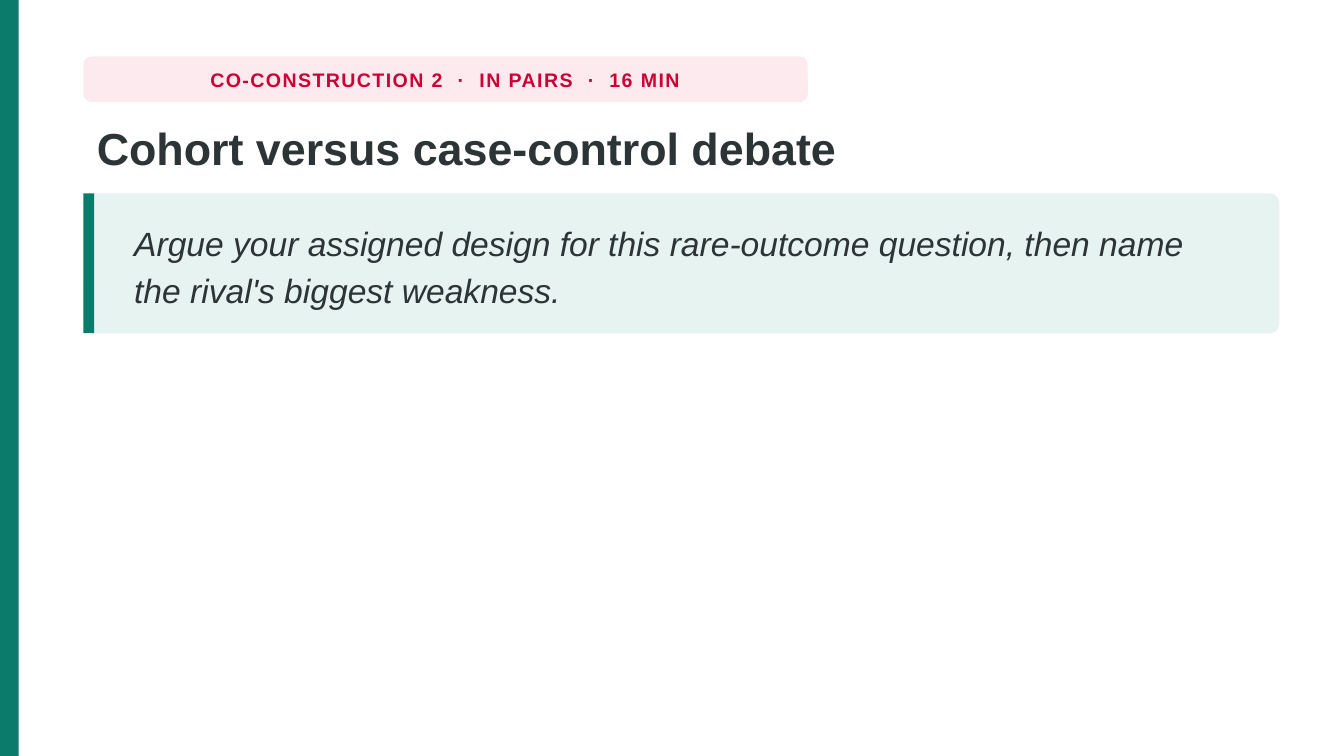
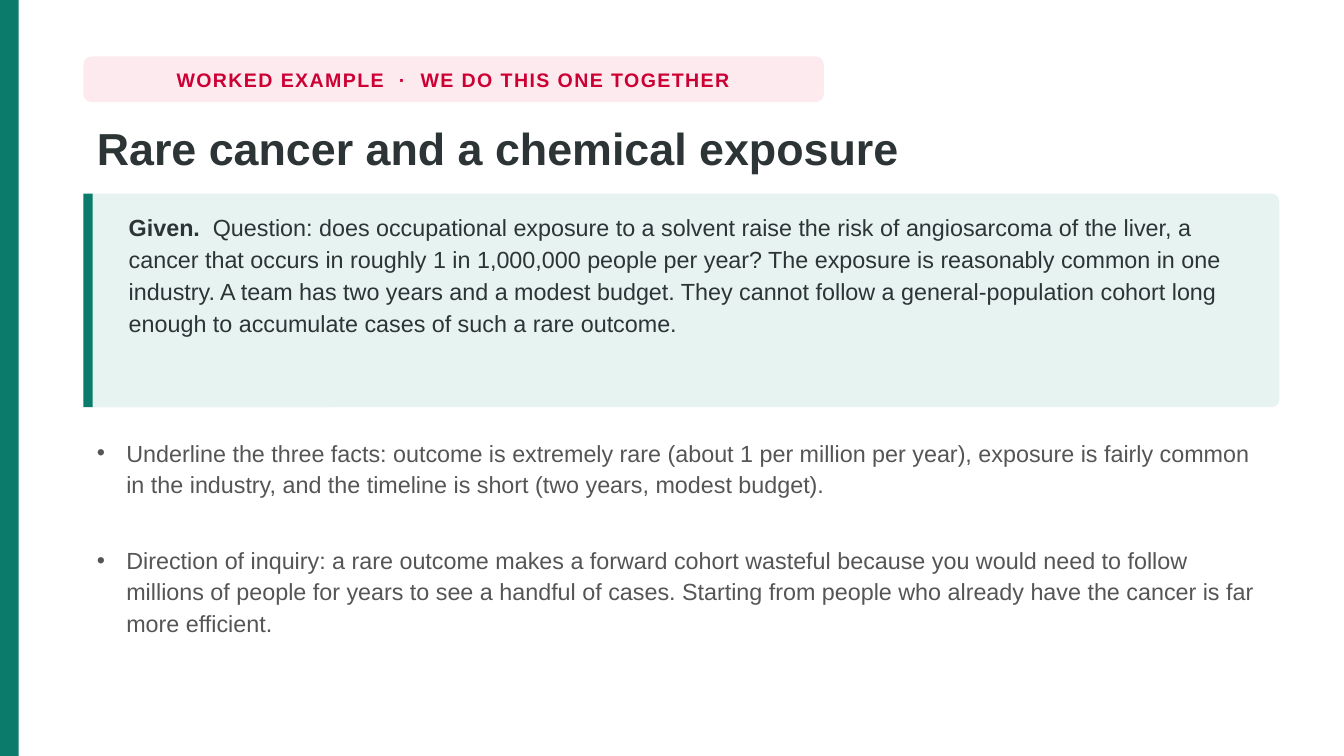
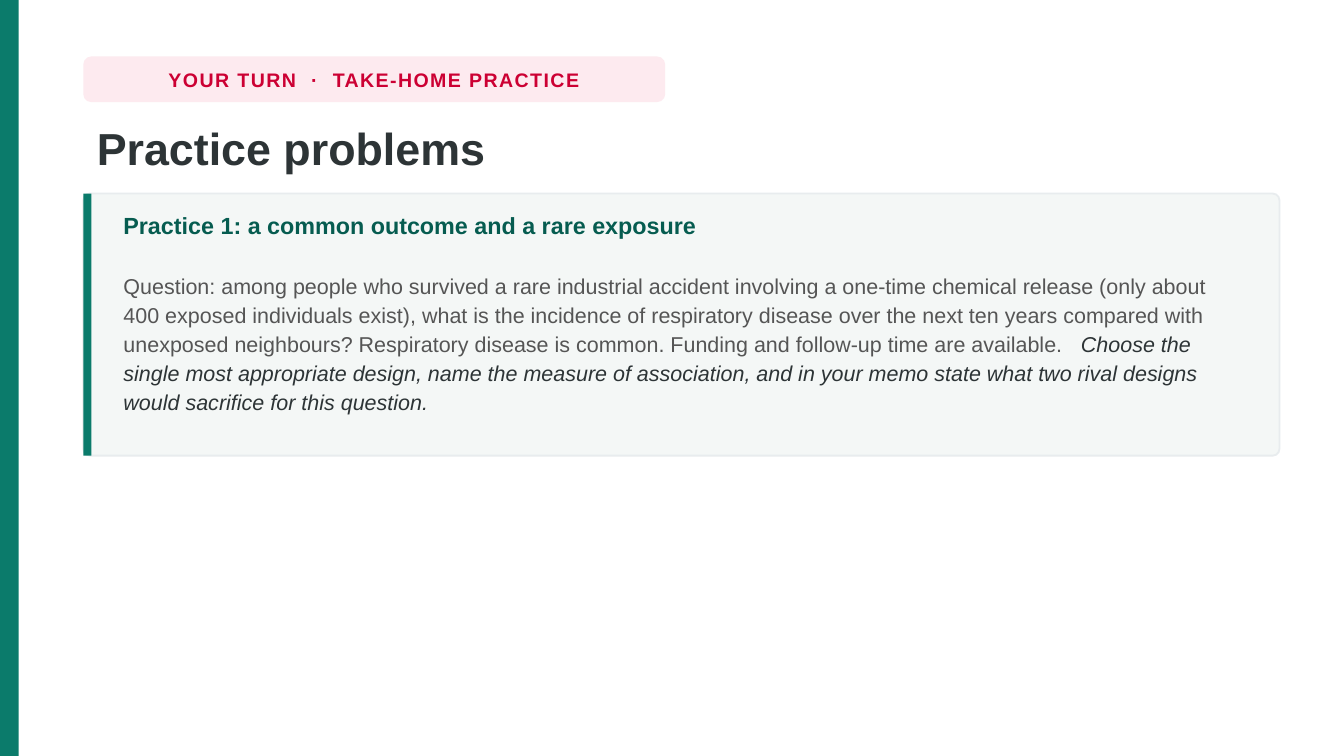
import pptx
import pptx.dml.color
import pptx.enum.shapes
import pptx.enum.text
import pptx.oxml
import pptx.oxml.ns
import pptx.util

Inches, Pt = pptx.util.Inches, pptx.util.Pt
SHAPE = pptx.enum.shapes.MSO_SHAPE
ALIGN = pptx.enum.text.PP_ALIGN
ANCHOR = pptx.enum.text.MSO_ANCHOR

FONT = "Arial"
COLORS = {
    "green": "0B7B6B", "dark_green": "065C50", "mint": "E6F3F0",
    "red": "CC0033", "pink": "FDEAEF", "ink": "2D3436",
    "gray": "555555", "pale": "F4F7F6", "border": "E8ECEE",
}

# Shared layout, in inches; the slide is 16:9
SLIDE_W = 10
SLIDE_H = SLIDE_W * 9 / 16
LEFT, WIDTH = 0.62, 8.9
CARD_TOP = 1.44

# Run styles: size, colour, bold, italic
STYLES = {
    "pill": (10.5, "red", True, False),
    "title": (24, "ink", True, False),
    "quote": (18, "ink", False, True),
    "label": (12.5, "ink", True, False),
    "given": (12.5, "ink", False, False),
    "bullet": (12.5, "gray", False, False),
    "heading": (12.5, "dark_green", True, False),
    "problem": (11.5, "gray", False, False),
    "task": (11.5, "ink", False, True),
}

# Content; a card's text is a list of paragraphs, each a list of (style, text)
SLIDES = [
    {
        "pill": ("CO-CONSTRUCTION 2  ·  IN PAIRS  ·  16 MIN", 5.39),
        "title": "Cohort versus case-control debate",
        "card": {
            "height": 1.04, "radius": 0.07, "fill": "mint", "bar": 0.08,
            "text_box": (0.9, 1.49, 8.35, 0.94), "anchor": ANCHOR.MIDDLE,
            "spacing": 1.16,
            "text": [[("quote", "Argue your assigned design for this rare-outcome question, "
                                "then name the rival's biggest weakness.")]],
        },
    },
    {
        "pill": ("WORKED EXAMPLE  ·  WE DO THIS ONE TOGETHER", 5.51),
        "title": "Rare cancer and a chemical exposure",
        "card": {
            "height": 1.59, "radius": 0.06, "fill": "mint", "bar": 0.07,
            "text_box": (0.86, 1.51, 8.4, 1.45), "spacing": 1.14,
            "text": [[
                ("label", "Given.  "),
                ("given", "Question: does occupational exposure to a solvent raise the risk "
                          "of angiosarcoma of the liver, a cancer that occurs in roughly 1 in "
                          "1,000,000 people per year? The exposure is reasonably common in one "
                          "industry. A team has two years and a modest budget. They cannot "
                          "follow a general-population cohort long enough to accumulate cases "
                          "of such a rare outcome."),
            ]],
        },
        "bullets": [
            "Underline the three facts: outcome is extremely rare (about 1 per million per "
            "year), exposure is fairly common in the industry, and the timeline is short "
            "(two years, modest budget).",
            "Direction of inquiry: a rare outcome makes a forward cohort wasteful because you "
            "would need to follow millions of people for years to see a handful of cases. "
            "Starting from people who already have the cancer is far more efficient.",
        ],
    },
    {
        "pill": ("YOUR TURN  ·  TAKE-HOME PRACTICE", 4.33),
        "title": "Practice problems",
        "card": {
            "height": 1.95, "radius": 0.05, "fill": "pale", "line": "border", "bar": 0.06,
            "text_box": (0.82, 1.5, 8.48, 1.79), "spacing": 1.12, "gap": 16.5,
            "text": [
                [("heading", "Practice 1: a common outcome and a rare exposure")],
                [
                    ("problem", "Question: among people who survived a rare industrial accident "
                                "involving a one-time chemical release (only about 400 exposed "
                                "individuals exist), what is the incidence of respiratory "
                                "disease over the next ten years compared with unexposed "
                                "neighbours? Respiratory disease is common. Funding and "
                                "follow-up time are available.   "),
                    ("task", "Choose the single most appropriate design, name the measure of "
                             "association, and in your memo state what two rival designs would "
                             "sacrifice for this question."),
                ],
            ],
        },
    },
]


def rgb(name):
    return pptx.dml.color.RGBColor.from_string(COLORS[name])


def style_run(r, style):
    size, color, r.font.bold, r.font.italic = STYLES[style]
    r.font.name = FONT
    r.font.size = Pt(size)
    r.font.color.rgb = rgb(color)


def place(sp, x, y, w, h):
    sp.left, sp.top, sp.width, sp.height = map(Inches, (x, y, w, h))


def add_block(slide, x, y, w, h, fill, radius=0, line=None):
    kind = SHAPE.ROUNDED_RECTANGLE if radius else SHAPE.RECTANGLE
    sp = slide.shapes.add_shape(kind, *map(Inches, (x, y, w, h)))
    sp.shadow.inherit = False
    sp.fill.solid()
    sp.fill.fore_color.rgb = rgb(fill)
    if radius:
        sp.adjustments[0] = radius / h
    if line:
        sp.line.color.rgb = rgb(line)
        sp.line.width = Pt(1)
    else:
        sp.line.fill.background()
    return sp


def add_pill(slide, text, width):
    sp = add_block(slide, LEFT, 0.42, width, 0.34, "pink", radius=0.06)
    tf = sp.text_frame
    tf.word_wrap = False
    tf.vertical_anchor = ANCHOR.MIDDLE
    p = tf.paragraphs[0]
    p.text = text
    p.alignment = ALIGN.CENTER
    r = p.runs[0]
    style_run(r, "pill")
    r.font._element.set("spc", "80")  # letter spacing


def set_title(slide, text):
    sp = slide.shapes.title
    place(sp, LEFT, 0.84, WIDTH, 0.56)
    tf = sp.text_frame
    tf.text = text
    tf.auto_size = pptx.enum.text.MSO_AUTO_SIZE.NONE
    tf.vertical_anchor = ANCHOR.TOP
    p = tf.paragraphs[0]
    p.alignment = ALIGN.LEFT
    p.line_spacing = 1.02
    style_run(p.runs[0], "title")


def add_card(slide, card):
    add_block(slide, LEFT, CARD_TOP, WIDTH, card["height"], card["fill"],
              card["radius"], card.get("line"))
    add_block(slide, LEFT, CARD_TOP, card["bar"], card["height"], "green")
    tf = slide.shapes.add_textbox(*map(Inches, card["text_box"])).text_frame
    tf.word_wrap = True
    tf.vertical_anchor = card.get("anchor", ANCHOR.TOP)
    for i, runs in enumerate(card["text"]):
        p = tf.add_paragraph() if i else tf.paragraphs[0]
        p.line_spacing = card["spacing"]
        if i:
            p.space_before = Pt(card["gap"])
        for style, text in runs:
            r = p.add_run()
            r.text = text
            style_run(r, style)


def set_bullets(slide, items):
    sp = slide.placeholders[1]
    place(sp, LEFT, 3.19, WIDTH, 1.73)
    tf = sp.text_frame
    tf.text = "\n".join(items)
    tf.auto_size = pptx.enum.text.MSO_AUTO_SIZE.NONE
    for i, p in enumerate(tf.paragraphs):
        pPr = p._p.get_or_add_pPr()
        pPr.set("marL", str(Inches(0.22)))
        pPr.set("indent", str(-Inches(0.22)))
        pPr.append(pptx.oxml.parse_xml(
            f'<a:buChar {pptx.oxml.ns.nsdecls("a")} char="•"/>'))
        p.line_spacing = 1.12
        p.space_before = Pt(24 if i else 0)
        style_run(p.runs[0], "bullet")


def main():
    prs = pptx.Presentation()
    prs.slide_width, prs.slide_height = Inches(SLIDE_W), Inches(SLIDE_H)
    for content in SLIDES:
        # Title and Content when there is a list, otherwise Title Only
        layout = prs.slide_layouts[1 if "bullets" in content else 5]
        slide = prs.slides.add_slide(layout)
        add_block(slide, 0, 0, 0.14, SLIDE_H, "green")
        add_pill(slide, *content["pill"])
        set_title(slide, content["title"])
        add_card(slide, content["card"])
        if "bullets" in content:
            set_bullets(slide, content["bullets"])
    prs.save("out.pptx")


if __name__ == "__main__":
    main()
